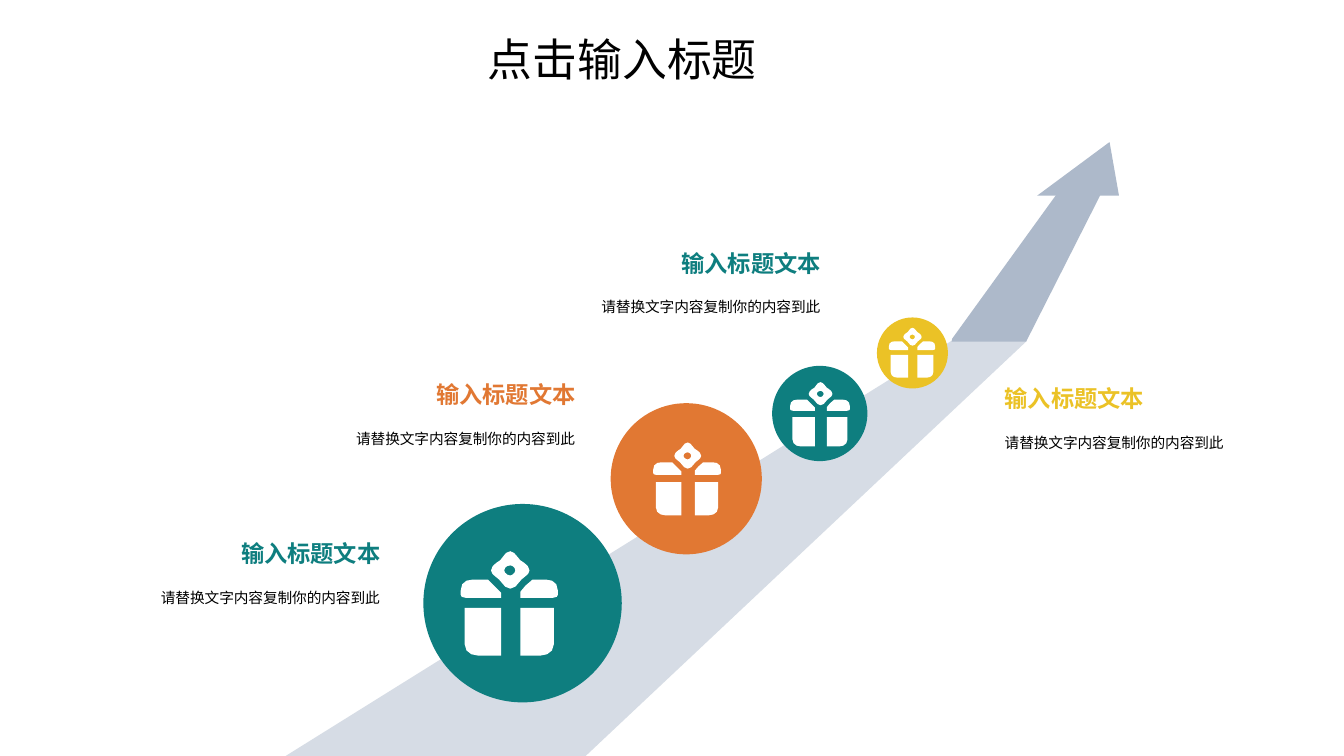
from lxml.etree import SubElement
from pptx import Presentation
from pptx.dml.color import RGBColor
from pptx.enum.shapes import MSO_SHAPE
from pptx.enum.text import MSO_ANCHOR, PP_ALIGN
from pptx.oxml.ns import qn
from pptx.util import Cm, Pt

BLACK = RGBColor(0x00, 0x00, 0x00)
WHITE = RGBColor(0xFF, 0xFF, 0xFF)
TEAL = RGBColor(0x0E, 0x7E, 0x7F)
ORANGE = RGBColor(0xE1, 0x78, 0x33)
YELLOW = RGBColor(0xEB, 0xC2, 0x26)
ROAD = RGBColor(0xD6, 0xDC, 0xE5)
ARROW = RGBColor(0xAD, 0xB9, 0xCA)
CJK_FONT = "Noto Sans CJK SC"

# Gift outlines on a grid 96 wide: a start point, then lines (x, y)
# or Bezier curves (two control points and an end point)
GIFT_WIDTH = 96
GIFT = [
    # Box, right and left
    [(59, 56), (92, 56), (92, 92), (92, 99, 86, 103, 79, 103), (59, 103)],
    [(4, 56), (40, 56), (40, 103), (17, 103), (10, 103, 4, 99, 4, 92)],
    # Lid, right and left
    [(71, 28), (84, 28), (91, 28, 96, 31, 96, 39), (96, 43), (95, 45), (91, 46),
     (59, 46), (59, 40), (64, 34)],
    [(12, 28), (27, 28), (33, 34), (40, 41), (40, 46), (5, 46), (1, 45), (0, 43),
     (0, 39), (0, 31, 5, 28, 12, 28)],
    # Bow hole and bow
    [(49, 14), (46, 14, 43, 16, 43, 19), (43, 21, 46, 24, 49, 24),
     (51, 24, 54, 21, 54, 19), (54, 16, 51, 14, 49, 14)],
    [(49, 0), (53, 0, 56, 6, 59, 9), (62, 11, 68, 14, 68, 19),
     (68, 23, 63, 25, 60, 28), (54, 35), (49, 37), (44, 35), (38, 28),
     (35, 25, 30, 23, 30, 19), (30, 14, 36, 11, 39, 9), (42, 6, 44, 0, 49, 0)],
]

# Circle (left, top, size), gift (left, top, width), label (left, top), in cm
MILESTONES = [
    ((15.39, 10.16, 3.81), (16.46, 11.15, 1.71), (7.87, 9.58), ORANGE, PP_ALIGN.RIGHT),
    ((10.67, 12.7, 5), (11.61, 13.89, 2.45), (2.95, 13.59), TEAL, PP_ALIGN.RIGHT),
    ((19.46, 9.22, 2.4), (19.91, 9.63, 1.51), (14.05, 6.27), TEAL, PP_ALIGN.RIGHT),
    ((22.1, 8, 1.79), (22.4, 8.26, 1.17), (25.12, 9.68), YELLOW, PP_ALIGN.LEFT),
]


def paint(shape, color):
    shape.shadow.inherit = False
    shape.fill.solid()
    shape.fill.fore_color.rgb = color
    shape.line.fill.background()


def add_outlines(shapes, outlines, color):
    """Draw closed outlines, given in cm on the slide, as one shape."""
    outlines = [[(Cm(x), Cm(y)) for x, y in outline] for outline in outlines]
    builder = shapes.build_freeform(*outlines[0][0], scale=1.0)
    builder.add_line_segments(outlines[0][1:], close=True)
    for outline in outlines[1:]:
        builder.move_to(*outline[0])
        builder.add_line_segments(outline[1:], close=True)
    paint(builder.convert_to_shape(), color)


def flatten(steps, count=3):
    """Turn lines and Bezier curves into a list of points."""
    points = [steps[0]]
    for step in steps[1:]:
        if len(step) == 2:
            points.append(step)
            continue
        (x0, y0), (x1, y1, x2, y2, x3, y3) = points[-1], step
        for i in range(1, count + 1):
            t = i / count
            a, b, c, d = (1 - t) ** 3, 3 * t * (1 - t) ** 2, 3 * t * t * (1 - t), t ** 3
            points.append((a * x0 + b * x1 + c * x2 + d * x3,
                           a * y0 + b * y1 + c * y2 + d * y3))
    return points


def add_gift(shapes, left, top, width):
    unit = width / GIFT_WIDTH
    outlines = [[(left + x * unit, top + y * unit) for x, y in flatten(steps)]
                for steps in GIFT]
    add_outlines(shapes, outlines, WHITE)


def add_run(paragraph, text, size, color, font="Arial", bold=False):
    run = paragraph.add_run()
    run.text = text
    run.font.name = font
    run.font.size = Pt(size)
    run.font.bold = bold
    run.font.color.rgb = color
    SubElement(run._r.get_or_add_rPr(), qn("a:ea"), typeface=CJK_FONT)


def add_label_box(shapes, left, top, height, align):
    frame = shapes.add_textbox(Cm(left), Cm(top), Cm(6.83), Cm(height)).text_frame
    frame.word_wrap = True
    frame.margin_left = frame.margin_right = Cm(0.2)
    frame.margin_top = frame.margin_bottom = 0
    frame.paragraphs[0].alignment = align
    return frame


def add_label(shapes, left, top, color, align):
    # Description
    description = add_label_box(shapes, left, top + 0.86, 1.63, align)
    description.vertical_anchor = MSO_ANCHOR.MIDDLE
    description.margin_bottom = Cm(0.5)
    description.paragraphs[0].line_spacing = 1.2
    add_run(description.paragraphs[0], "请替换文字内容复制你的内容到此", 10.5, BLACK)
    # Heading
    heading = add_label_box(shapes, left, top, 0.69, align)
    add_run(heading.paragraphs[0], "输入标题文本", 16.6, color, bold=True)


def add_milestone(slide, circle, gift, label, color, align):
    shapes = slide.shapes.add_group_shape().shapes
    left, top, size = circle
    paint(shapes.add_shape(MSO_SHAPE.OVAL, Cm(left), Cm(top), Cm(size), Cm(size)), color)
    add_label(shapes, *label, color, align)
    add_gift(shapes, *gift)


def add_rising_arrow(slide):
    shapes = slide.shapes.add_group_shape().shapes
    # Road
    add_outlines(shapes, [[(23.98, 8.59), (25.88, 8.59), (14.76, 19.05), (7.2, 19.05)]], ROAD)
    # Shaft and head
    add_outlines(shapes, [[(26.77, 4.7), (27.84, 4.7), (25.86, 8.61), (23.98, 8.61),
                           (24, 8.53)]], ARROW)
    head = shapes.add_shape(MSO_SHAPE.ISOSCELES_TRIANGLE,
                            Cm(26.14), Cm(3.58), Cm(2.06), Cm(1.35))
    head.adjustments[0] = 0.885
    paint(head, ARROW)


def add_title(slide, left, top, width, height):
    title = slide.shapes.title
    title.left, title.top, title.width, title.height = map(Cm, (left, top, width, height))
    title.text_frame.word_wrap = False
    paragraph = title.text_frame.paragraphs[0]
    paragraph.alignment = PP_ALIGN.LEFT
    add_run(paragraph, "点击输入标题", 32, BLACK, font=CJK_FONT)


def main():
    presentation = Presentation()
    presentation.slide_width, presentation.slide_height = Cm(33.87), Cm(19.05)
    slide = presentation.slides.add_slide(presentation.slide_layouts[5])
    add_title(slide, 12.04, 0.66, 7.52, 1.63)
    add_rising_arrow(slide)
    for milestone in MILESTONES:
        add_milestone(slide, *milestone)
    presentation.save("out.pptx")


if __name__ == "__main__":
    main()
